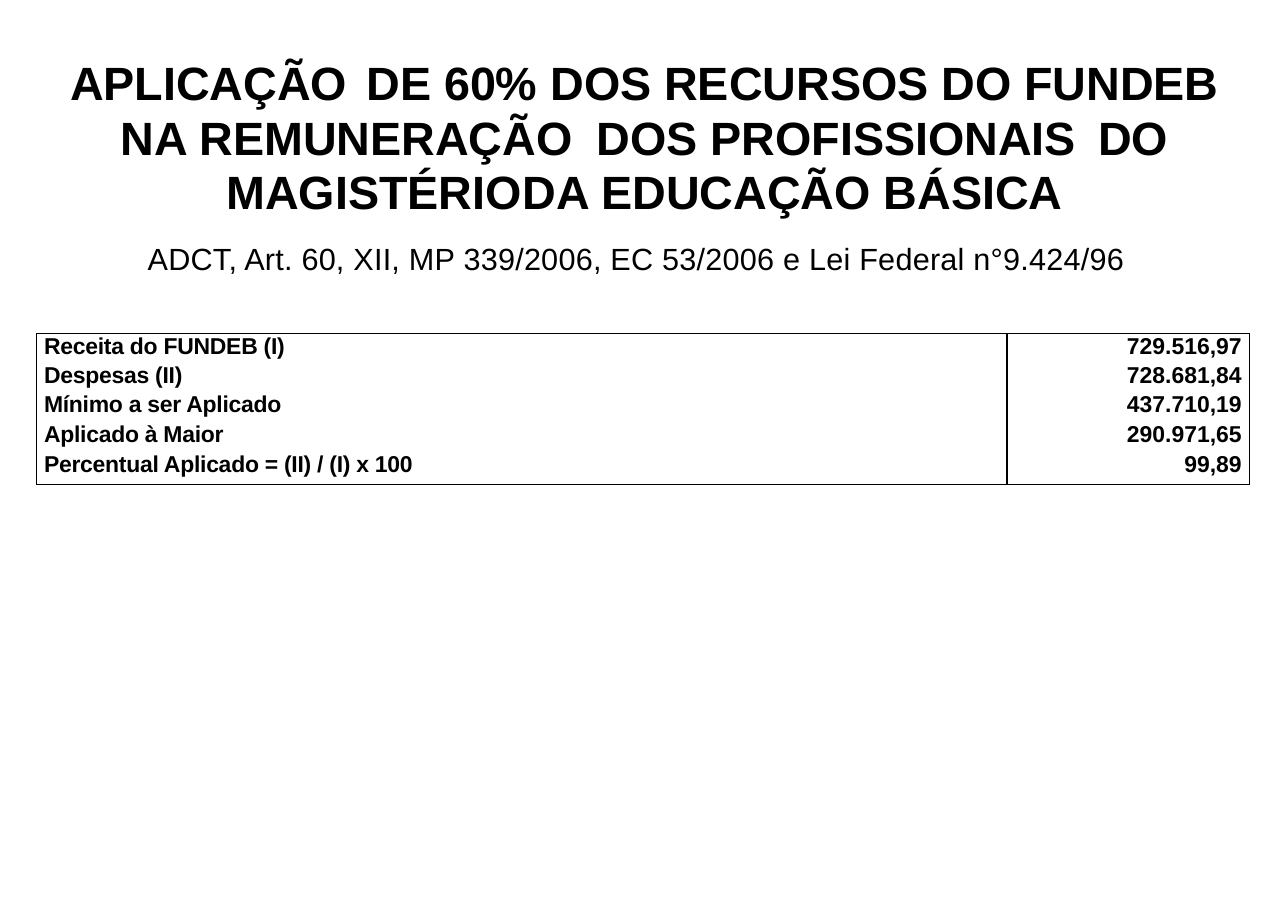
from lxml import etree
from pptx import Presentation, util as u
from pptx.dml.color import RGBColor
from pptx.enum import text
from pptx.oxml.ns import qn

COLORS = {"ink": "000000"}
PAGE_W, PAGE_H = 11.69, 8.27
MARGINS = ("margin_left", "margin_top", "margin_right", "margin_bottom")

deck = Presentation()
deck.slide_width, deck.slide_height = u.Inches(PAGE_W), u.Inches(PAGE_H)
slide = deck.slides.add_slide(deck.slide_layouts[6])


def write(paragraph, words, size, bold, tracking, layout):
    """Fill a paragraph; tracking is in hundredths of a point."""
    paragraph.text = words
    for name, value in layout.items():
        setattr(paragraph, name, value)
    for run in paragraph.runs:
        font = {"name": "Arial", "size": u.Pt(size), "bold": bold}
        for name, value in font.items():
            setattr(run.font, name, value)
        run.font.color.rgb = RGBColor.from_string(COLORS["ink"])
        run.font._element.set("spc", str(tracking))


def add_border(cell, side, visible):
    line = etree.SubElement(cell._tc.get_or_add_tcPr(), qn(f"a:ln{side}"),
                            w=str(u.Pt(0.85) if visible else 0))
    if visible:
        fill = etree.SubElement(line, qn("a:solidFill"))
        etree.SubElement(fill, qn("a:srgbClr"), val=COLORS["ink"])
    else:
        etree.SubElement(line, qn("a:noFill"))


# Heading and legal basis
title = ("APLICAÇÃO\tDE 60% DOS RECURSOS DO FUNDEB\v"
         "NA REMUNERAÇÃO\tDOS PROFISSIONAIS\tDO\v"
         "MAGISTÉRIO\tDA EDUCAÇÃO BÁSICA")
legal_basis = "ADCT, Art. 60, XII, MP 339/2006, EC 53/2006 e Lei Federal n°9.424/96"
headings = [
    (title, (0.56, 0.52, 10.58, 1.42), 30.5, True, 0,
     {"alignment": text.PP_ALIGN.CENTER, "line_spacing": 0.97}),
    (legal_basis, (1.34, 2.18, 9.02, 0.28), 20, False, 13,
     {"alignment": text.PP_ALIGN.LEFT, "line_spacing": u.Pt(23.9)}),
]
for words, place, size, bold, tracking, layout in headings:
    frame = slide.shapes.add_textbox(*map(u.Inches, place)).text_frame
    frame.word_wrap = True
    for margin in MARGINS:
        setattr(frame, margin, 0)
    heading = frame.paragraphs[0]
    write(heading, words, size, bold, tracking, layout)
    if "\t" in words:
        stops = etree.SubElement(heading._p.get_or_add_pPr(), qn("a:tabLst"))
        for stop in (2.69, 4.32, 8.87):
            etree.SubElement(stops, qn("a:tab"), pos=str(u.Inches(stop)), algn="l")

# Revenue and spending table
accounts = [
    ("Receita do FUNDEB (I)", "729.516,97"),
    ("Despesas (II)", "728.681,84"),
    ("Mínimo a ser Aplicado", "437.710,19"),
    ("Aplicado à Maior", "290.971,65"),
    ("Percentual Aplicado = (II) / (I) x 100", "99,89"),
]
column_widths = (8.81, 2.2)
row_heights = (0.26, 0.27, 0.27, 0.27, 0.3)
table = slide.shapes.add_table(
    len(accounts), 2, u.Inches(0.33), u.Inches(3.03),
    u.Inches(sum(column_widths)), u.Inches(sum(row_heights))).table
table.first_row = table.horz_banding = False
for column, width in zip(table.columns, column_widths):
    column.width = u.Inches(width)

last = len(accounts) - 1
for r, account in enumerate(accounts):
    table.rows[r].height = u.Inches(row_heights[r])
    for c, words in enumerate(account):
        cell = table.cell(r, c)
        for margin, inset in zip(MARGINS, (0.07, 0, 0.07, 0)):
            setattr(cell, margin, u.Inches(inset))
        side = text.PP_ALIGN.RIGHT if c else text.PP_ALIGN.LEFT
        write(cell.text_frame.paragraphs[0], words, 15, True,
              0 if c else -17, {"alignment": side})
        for edge, visible in zip("LRTB", (True, True, r == 0, r == last)):
            add_border(cell, edge, visible)
        cell.fill.background()

deck.save("out.pptx")
